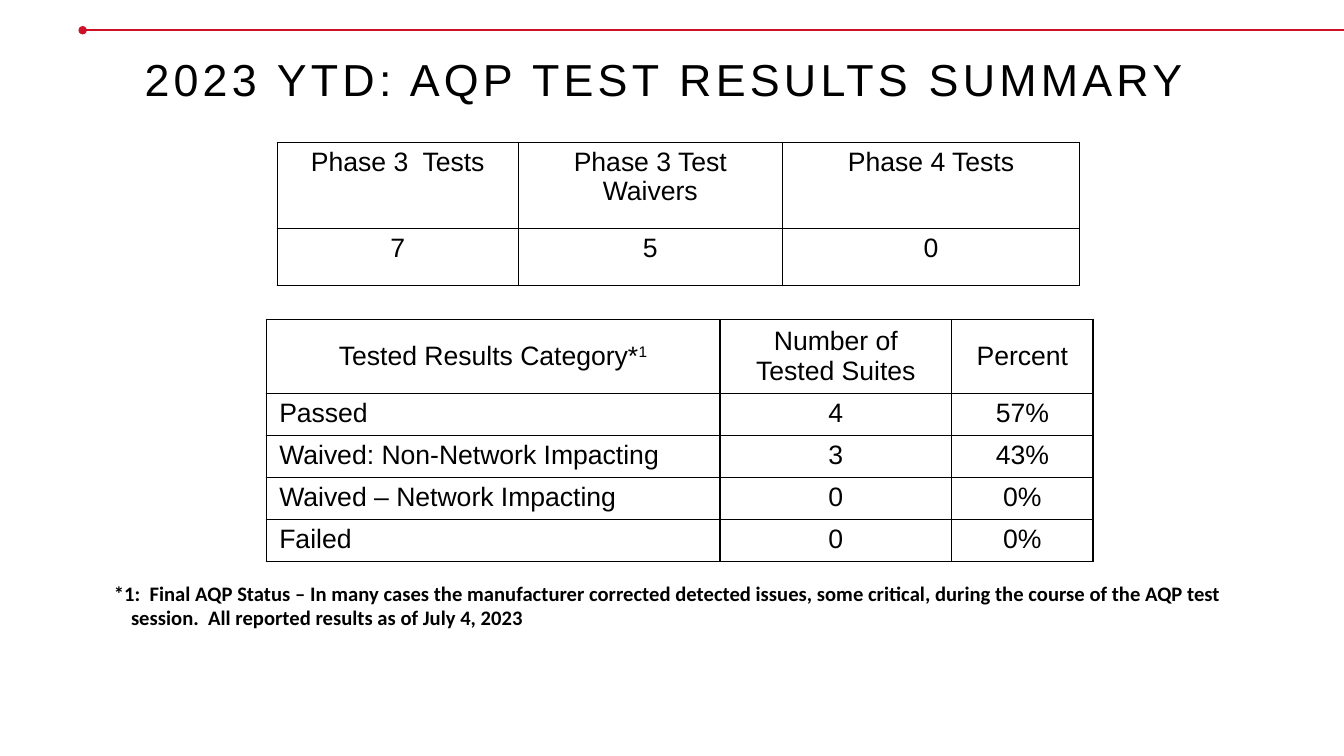
from lxml.etree import SubElement
from pptx import Presentation
from pptx.dml.color import RGBColor
from pptx.enum.shapes import MSO_CONNECTOR
from pptx.enum.text import MSO_ANCHOR, PP_ALIGN
from pptx.oxml.ns import qn
from pptx.util import Inches, Pt

BLACK = RGBColor(0x00, 0x00, 0x00)
RED = RGBColor(0xCE, 0x11, 0x26)

TEST_COUNTS = [
    ["Phase 3  Tests", "Phase 3 Test Waivers", "Phase 4 Tests"],
    ["7", "5", "0"],
]
RESULT_CATEGORIES = [
    ["Tested Results Category*", "Number of Tested Suites", "Percent"],
    ["Passed", "4", "57%"],
    ["Waived: Non-Network Impacting", "3", "43%"],
    ["Waived – Network Impacting", "0", "0%"],
    ["Failed", "0", "0%"],
]
FOOTNOTE = (
    "*1:  Final AQP Status – In many cases the manufacturer corrected detected issues, "
    "some critical, during the course of the AQP test session.  "
    "All reported results as of July 4, 2023"
)


class SummarySlide:
    """Draws ruled lines, text and bordered tables on one slide."""

    heading_font = "Arial"
    note_font = "Calibri"
    table_size = 19

    def __init__(self, deck):
        self.slide = deck.slides.add_slide(deck.slide_layouts[6])

    def style(self, paragraph, name, size, bold=False):
        font = paragraph.font
        font.name, font.size, font.bold = name, Pt(size), bold
        font.color.rgb = BLACK

    def rule(self, left, right, top):
        line = self.slide.shapes.add_connector(
            MSO_CONNECTOR.STRAIGHT, Inches(left), Inches(top), Inches(right), Inches(top))
        line.line.color.rgb = RED
        line.line.width = Pt(1.5)
        SubElement(line.line._get_or_add_ln(), qn("a:headEnd"), type="oval")
        SubElement(line._element.spPr, qn("a:effectLst"))

    def text(self, left, top, width, height, wording):
        box = self.slide.shapes.add_textbox(
            Inches(left), Inches(top), Inches(width), Inches(height))
        frame = box.text_frame
        frame.word_wrap = True
        frame.margin_left = frame.margin_right = Inches(0.13)
        frame.margin_top = frame.margin_bottom = Inches(0.07)
        paragraph = frame.paragraphs[0]
        paragraph.add_run().text = wording
        return paragraph

    def title(self, wording):
        paragraph = self.text(0, 0.55, 13.33, 0.84, wording)
        paragraph.alignment = PP_ALIGN.CENTER
        paragraph.line_spacing = 0.8
        self.style(paragraph, self.heading_font, 32)
        paragraph.runs[0]._r.get_or_add_rPr().set("spc", "300")

    def footnote(self, wording):
        paragraph = self.text(1, 5.69, 11.43, 0.66, wording)
        properties = paragraph._p.get_or_add_pPr()
        properties.set("marL", str(Inches(0.17)))
        properties.set("indent", str(-Inches(0.17)))
        self.style(paragraph, self.note_font, 14.7, bold=True)

    def border(self, cell):
        properties = cell._tc.get_or_add_tcPr()
        for side in ("lnL", "lnR", "lnT", "lnB"):
            edge = SubElement(properties, qn(f"a:{side}"), w=str(Pt(1)))
            fill = SubElement(edge, qn("a:solidFill"))
            SubElement(fill, qn("a:srgbClr"), val=str(BLACK))

    def table(self, left, top, widths, heights, rows):
        table = self.slide.shapes.add_table(
            len(rows), len(widths), Inches(left), Inches(top),
            Inches(sum(widths)), Inches(sum(heights))).table
        table.first_row = table.horz_banding = False
        for column, width in zip(table.columns, widths):
            column.width = Inches(width)
        for row, height, wordings in zip(table.rows, heights, rows):
            row.height = Inches(height)
            for cell, wording in zip(row.cells, wordings):
                cell.text = wording
                cell.margin_left = cell.margin_right = Inches(0.13)
                cell.margin_top = cell.margin_bottom = Inches(0.05)
                self.border(cell)
                cell.fill.background()
                paragraph = cell.text_frame.paragraphs[0]
                paragraph.alignment = PP_ALIGN.CENTER
                self.style(paragraph, self.heading_font, self.table_size)
        return table

    def results_table(self):
        table = self.table(2.64, 3.17, [4.5, 2.3, 1.4], [0.72] + [0.41] * 4,
                           RESULT_CATEGORIES)
        for cell in table.rows[0].cells:
            cell.vertical_anchor = MSO_ANCHOR.MIDDLE
        for row in range(1, len(RESULT_CATEGORIES)):
            table.cell(row, 0).text_frame.paragraphs[0].alignment = PP_ALIGN.LEFT
        span = table.cell(0, 0).text_frame.paragraphs[0].add_run()
        span.text = "1"
        span._r.get_or_add_rPr().set("baseline", "30000")


def main():
    deck = Presentation()
    deck.slide_width, deck.slide_height = Inches(13.33), Inches(7.5)
    page = SummarySlide(deck)
    page.rule(0.82, 13.33, 0.3)
    page.title("2023 YTD: AQP TEST RESULTS SUMMARY ")
    page.results_table()
    page.table(2.75, 1.41, [2.39, 2.62, 2.95], [0.86, 0.56], TEST_COUNTS)
    page.footnote(FOOTNOTE)
    deck.save("out.pptx")


if __name__ == "__main__":
    main()
